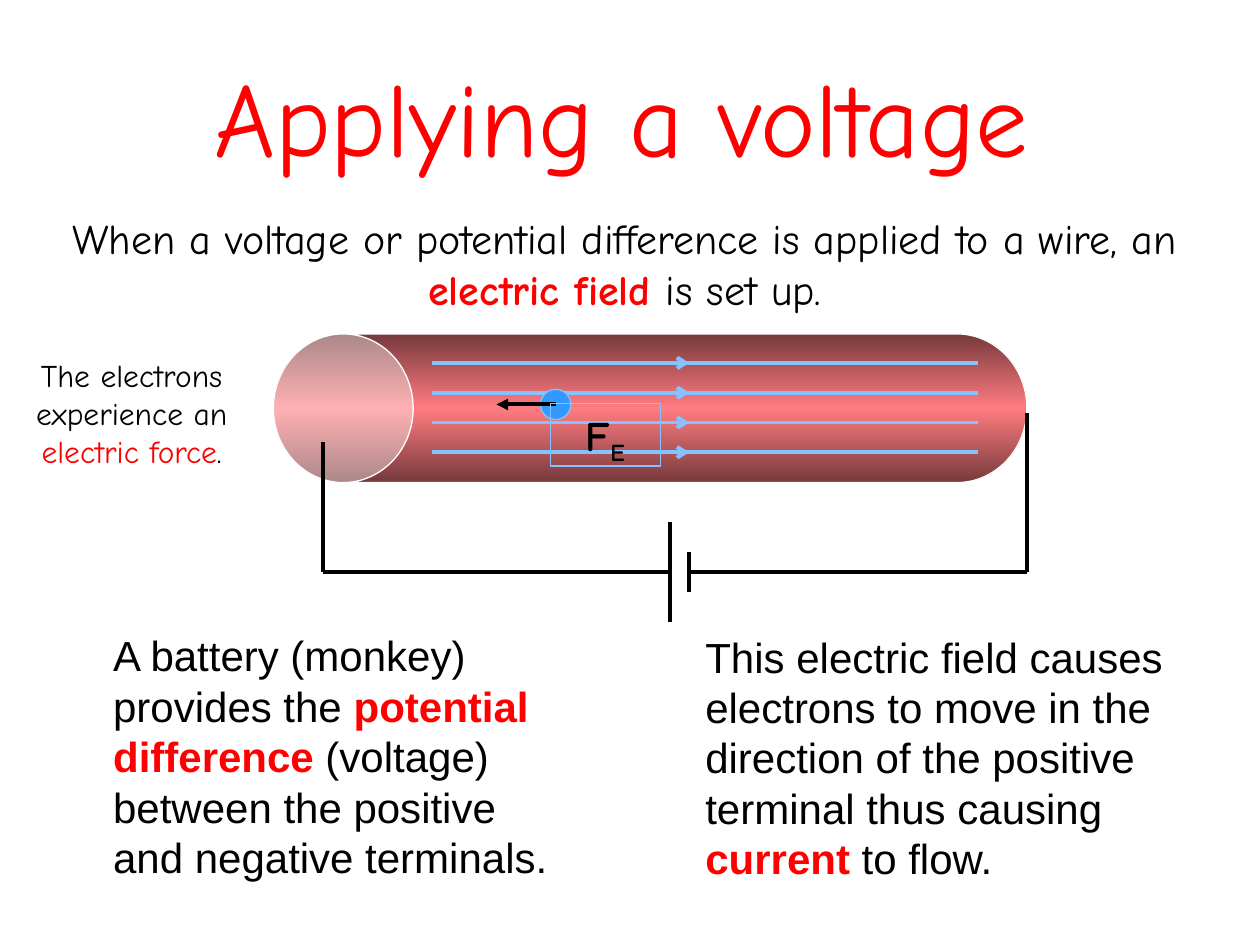
from copy import deepcopy

from pptx import Presentation
from pptx.dml.color import RGBColor
from pptx.enum.shapes import MSO_CONNECTOR as Connector, MSO_SHAPE as Shape
from pptx.enum.text import MSO_ANCHOR as Anchor, PP_ALIGN as Align
from pptx.oxml.ns import qn
from pptx.util import Inches, Pt
from lxml.etree import SubElement

BLACK, RED, WHITE = "000000", "FF0000", "FFFFFF"
FIELD_BLUE, ELECTRON_BLUE = "85C2FF", "3399FF"
WIRE_DARK, WIRE_LIGHT = "76393B", "FF7C80"
HAND, SANS = "Comic Neue", "Arial"


def color(hex_value):
    return RGBColor.from_string(hex_value)


def write_text(frame, runs, font, size, align, anchor=Anchor.TOP):
    for key, value in {"word_wrap": True, "vertical_anchor": anchor}.items():
        setattr(frame, key, value)
    paragraph = frame.paragraphs[0]
    paragraph.alignment = align
    for words, tint, bold in runs:
        run = paragraph.add_run()
        run.text = words
        formats = {"name": font, "size": Pt(size), "bold": bold}
        for key, value in formats.items():
            setattr(run.font, key, value)
        run.font.color.rgb = color(tint)


def add_passage(slide, box, runs, font, size, align=Align.CENTER, anchor=Anchor.TOP):
    passage = slide.shapes.add_textbox(*map(Inches, box))
    write_text(passage.text_frame, runs, font, size, align, anchor)


def add_outlined(slide, preset, box, outline, fill=None):
    outlined = slide.shapes.add_shape(preset, *map(Inches, box))
    outlined.shadow.inherit = False
    outlined.line.color.rgb = color(outline)
    outlined.line.width = Pt(0.75)
    if fill:
        outlined.fill.solid()
        outlined.fill.fore_color.rgb = color(fill)
    else:
        outlined.fill.background()
    return outlined


def add_stroke(slide, start, end, tint=BLACK, arrowhead=None):
    stroke = slide.shapes.add_connector(
        Connector.STRAIGHT, *map(Inches, (*start, *end)))
    stroke.line.color.rgb = color(tint)
    stroke.line.width = Pt(2.25)
    if arrowhead:
        SubElement(stroke.line._get_or_add_ln(), qn("a:tailEnd"), type=arrowhead)
    SubElement(stroke._element.spPr, qn("a:effectLst"))


def add_wire(slide, box):
    left, top, width, height = box
    upright = (left + (width - height) / 2, top + (height - width) / 2, height, width)
    wire = add_outlined(slide, Shape.CAN, upright, WHITE)
    wire.rotation = 270
    wire.adjustments[0] = 0.94
    wire.fill.gradient()
    wire.fill.gradient_angle = 0
    first_stop = wire._element.spPr.find(".//" + qn("a:gs"))
    middle_stop = deepcopy(first_stop)
    middle_stop.set("pos", "50000")
    first_stop.addnext(middle_stop)
    for stop, tint in zip(wire.fill.gradient_stops, (WIRE_DARK, WIRE_LIGHT, WIRE_DARK)):
        stop.color.rgb = color(tint)


def add_circuit(slide, box):
    left, top, width, height = box
    right, bottom = left + width, top + height
    long_plate, short_plate = left + 2.76, left + 2.91
    add_stroke(slide, (left, top + 0.23), (left, bottom))
    add_stroke(slide, (left, bottom), (long_plate, bottom))
    for plate, half in ((long_plate, 0.4), (short_plate, 0.16)):
        add_stroke(slide, (plate, bottom - half), (plate, bottom + half))
    add_stroke(slide, (short_plate, bottom), (right, bottom))
    add_stroke(slide, (right, top), (right, bottom))


def add_electric_field(slide, box, count=4):
    left, top, width, height = box
    for index in range(count):
        y = top + index * height / (count - 1)
        add_stroke(slide, (left, y), (left + 2.04, y), FIELD_BLUE, "arrow")
        add_stroke(slide, (left + 1.88, y), (left + width, y), FIELD_BLUE)


def add_electron(slide, box):
    left, top, width, height = box
    center_x, center_y = left + width / 2, top + height / 2
    add_outlined(slide, Shape.OVAL, box, FIELD_BLUE, ELECTRON_BLUE)
    add_stroke(slide, (center_x, center_y), (center_x - 0.47, center_y),
               arrowhead="triangle")
    label_box = (center_x - 0.04, center_y - 0.01, 0.87, 0.5)
    label = add_outlined(slide, Shape.RECTANGLE, label_box, FIELD_BLUE)
    write_text(label.text_frame, [("F", BLACK, True), ("E", BLACK, True)],
               HAND, 24, Align.CENTER)
    subscript = label.text_frame.paragraphs[0].runs[1]
    subscript.font._element.set("baseline", "-25000")


def build_slide(slide):
    add_passage(slide, (0.43, 0.29, 9, 1.25), [("Applying a voltage", RED, False)],
                HAND, 60, anchor=Anchor.MIDDLE)
    add_passage(slide, (0.35, 1.64, 9.21, 0.91), [
        ("When a voltage or potential difference is applied to a wire, an ", BLACK, False),
        ("electric field ", RED, True),
        ("is set up.", BLACK, False)], HAND, 24)
    add_passage(slide, (-0.08, 2.78, 2.25, 1.01), [
        ("The electrons experience an ", BLACK, False),
        ("electric force", RED, False),
        (".", BLACK, False)], HAND, 18)
    add_wire(slide, (2.17, 2.65, 5.98, 1.18))
    add_circuit(slide, (2.56, 3.28, 5.59, 1.26))
    add_electric_field(slide, (3.43, 2.88, 4.33, 0.71))
    add_electron(slide, (4.29, 3.09, 0.24, 0.24))
    add_passage(slide, (0.8, 4.95, 3.73, 2.12), [
        ("A battery (monkey) provides the ", BLACK, False),
        ("potential difference", RED, True),
        (" (voltage) between the positive and negative terminals.", BLACK, False)],
        SANS, 24, Align.LEFT)
    add_passage(slide, (5.5, 4.96, 4.17, 2.12), [
        ("This electric field causes electrons to move in the direction of the "
         "positive terminal thus causing ", BLACK, False),
        ("current", RED, True),
        (" to flow.", BLACK, False)], SANS, 24, Align.LEFT)


def main():
    deck = Presentation()
    for key, value in {"slide_width": Inches(10), "slide_height": Inches(7.5)}.items():
        setattr(deck, key, value)
    build_slide(deck.slides.add_slide(deck.slide_layouts[6]))
    deck.save("out.pptx")


if __name__ == "__main__":
    main()
